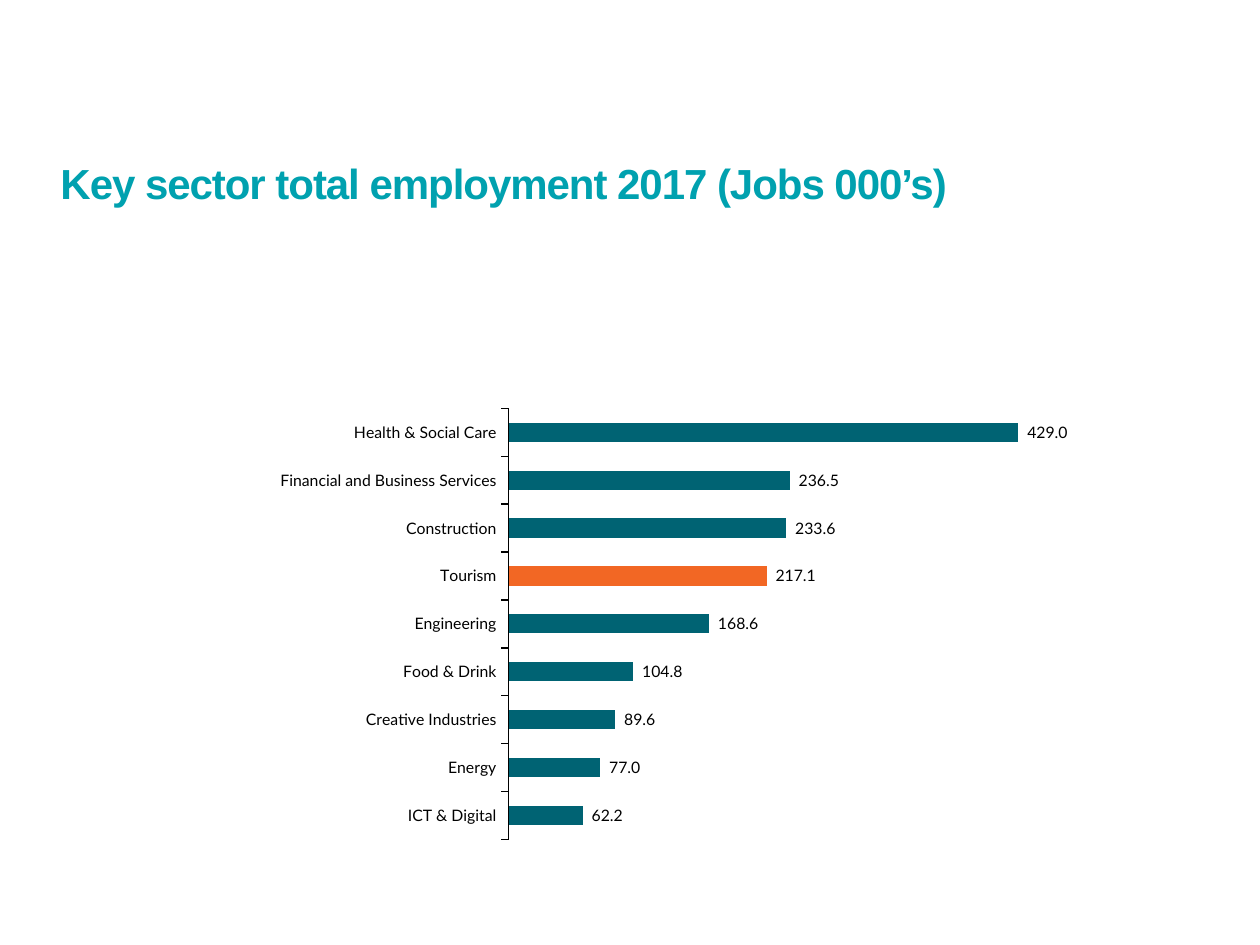
import pptx
import pptx.chart.data
import pptx.dml.color
import pptx.enum.chart
import pptx.enum.text
import pptx.oxml
import pptx.oxml.ns
import pptx.util
from pptx.util import Inches

RGBColor = pptx.dml.color.RGBColor
TITLE_TEAL = RGBColor(0x00, 0xA1, 0xAF)
BAR_TEAL = RGBColor(0x00, 0x63, 0x73)
ORANGE = RGBColor(0xF2, 0x67, 0x24)
BLACK = RGBColor(0, 0, 0)

NUMBER_FORMAT = '_-* #,##0.0_-;\\-* #,##0.0_-;_-* "-"??_-;'
HIGHLIGHT = "Tourism"
JOBS = {
    "ICT & Digital": 62.2,
    "Energy": 77.0,
    "Creative Industries": 89.6,
    "Food & Drink": 104.8,
    "Engineering": 168.6,
    "Tourism": 217.1,
    "Construction": 233.6,
    "Financial and Business Services": 236.5,
    "Health & Social Care": 429.0,
}


def add_title(s, text):
    box = s.shapes.add_textbox(Inches(0.48), Inches(0.4), Inches(8.22), Inches(1.25))
    tf = box.text_frame
    tf.word_wrap = True
    tf.vertical_anchor = pptx.enum.text.MSO_ANCHOR.BOTTOM
    tf.margin_left = tf.margin_right = tf.margin_top = tf.margin_bottom = 0
    tf.text = text
    p = tf.paragraphs[0]
    p.line_spacing = pptx.util.Pt(68)
    r = p.runs[0]
    r.font.name = "Arial"
    r.font.size = pptx.util.Pt(24)
    r.font.bold = True
    r.font.color.rgb = TITLE_TEAL
    # Letter spacing in hundredths of a point
    r.font._element.set("spc", "-60")


def set_plot_layout(chart, x, y, w, h):
    plot_area = chart._chartSpace.chart.plotArea
    for old in plot_area.findall(pptx.oxml.ns.qn("c:layout")):
        plot_area.remove(old)
    sizes = "".join(f'<c:{tag} val="{val}"/>' for tag, val in zip("xywh", (x, y, w, h)))
    plot_area.insert(0, pptx.oxml.parse_xml(
        f'<c:layout {pptx.oxml.ns.nsdecls("c")}><c:manualLayout>'
        '<c:layoutTarget val="inner"/><c:xMode val="edge"/><c:yMode val="edge"/>'
        f'{sizes}</c:manualLayout></c:layout>'))


def add_jobs_chart(s):
    data = pptx.chart.data.CategoryChartData(number_format=NUMBER_FORMAT)
    data.categories = list(JOBS)
    data.add_series("Series 1", list(JOBS.values()))
    chart = s.shapes.add_chart(
        pptx.enum.chart.XL_CHART_TYPE.BAR_CLUSTERED,
        Inches(0.73), Inches(3.17), Inches(8.27), Inches(3.53), data).chart
    chart.has_legend = False
    chart.has_title = False
    chart.font.name = "Lato"
    chart.font.size = pptx.util.Pt(9)
    chart.font.color.rgb = BLACK
    set_plot_layout(chart, 0.4, 0.02, 0.57, 0.97)

    # Axes
    axis = chart.category_axis
    axis.major_tick_mark = pptx.enum.chart.XL_TICK_MARK.OUTSIDE
    axis.format.line.color.rgb = BLACK
    axis.format.line.width = pptx.util.Pt(0.75)
    values = chart.value_axis
    values.visible = False
    values.has_major_gridlines = False
    values.minimum_scale = 0
    values.maximum_scale = 500

    # Bars, with one sector picked out
    plot = chart.plots[0]
    plot.gap_width = 150
    plot.vary_by_categories = False
    bars = plot.series[0]
    bars.format.fill.solid()
    bars.format.fill.fore_color.rgb = BAR_TEAL
    fill = bars.points[list(JOBS).index(HIGHLIGHT)].format.fill
    fill.solid()
    fill.fore_color.rgb = ORANGE

    # Value labels
    labels = bars.data_labels
    labels.show_value = True
    labels.number_format = NUMBER_FORMAT
    labels.number_format_is_linked = False
    labels.position = pptx.enum.chart.XL_LABEL_POSITION.OUTSIDE_END


def main():
    prs = pptx.Presentation()
    prs.slide_width = Inches(10)
    prs.slide_height = Inches(7.5)
    s = prs.slides.add_slide(prs.slide_layouts[6])
    add_title(s, "Key sector total employment 2017 (Jobs 000’s)")
    add_jobs_chart(s)
    prs.save("out.pptx")


if __name__ == "__main__":
    main()
